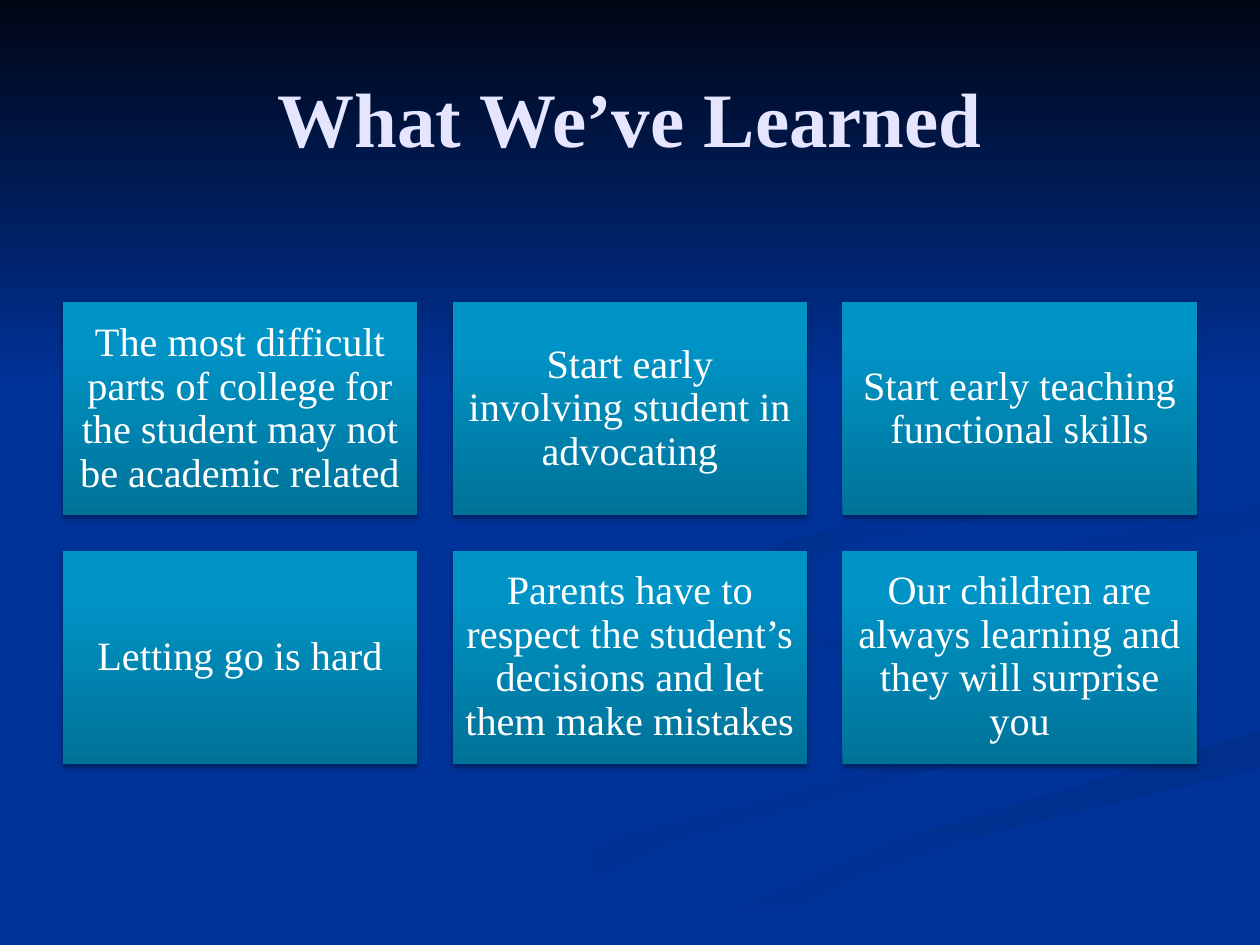
import lxml.etree
import pptx
import pptx.dml.color
import pptx.enum.shapes
import pptx.enum.text
import pptx.oxml
import pptx.oxml.ns
import pptx.util

COLORS = {
    "background": "003399",
    "night": "000514",
    "ribbon": "003193",
    "ribbon_dark": "002F8C",
    "ribbon_mid": "003091",
    "title": "E5E5FF",
    "card_bottom": "007298",
    "card_middle": "0094C6",
    "card_top": "0095C7",
    "text": "FFFFFF",
}
FONT = "Times New Roman"
RECTANGLE = pptx.enum.shapes.MSO_SHAPE.RECTANGLE


def paint(shape, stops, angle):
    """Fill with a gradient of {percent: colour}; angle is counter-clockwise."""
    shape.shadow.inherit = False
    shape.line.fill.background()
    shape.fill.gradient()
    shape.fill.gradient_angle = angle
    stop_list = shape._element.spPr.find(".//" + pptx.oxml.ns.qn("a:gsLst"))
    for old_stop in list(stop_list):
        stop_list.remove(old_stop)
    for percent, color in stops.items():
        stop = lxml.etree.SubElement(stop_list, pptx.oxml.ns.qn("a:gs"), pos=str(percent * 1000))
        lxml.etree.SubElement(stop, pptx.oxml.ns.qn("a:srgbClr"), val=COLORS[color])


def write(shape, text, size, color, bold=False):
    """Put one centred paragraph in the middle of a shape."""
    frame = shape.text_frame
    frame.word_wrap = True
    frame.vertical_anchor = pptx.enum.text.MSO_ANCHOR.MIDDLE
    paragraph = frame.paragraphs[0]
    paragraph.alignment = pptx.enum.text.PP_ALIGN.CENTER
    run = paragraph.add_run()
    run.text = text
    run.font.name = FONT
    run.font.size = pptx.util.Pt(size)
    run.font.bold = bold
    run.font.color.rgb = pptx.dml.color.RGBColor.from_string(COLORS[color])
    return paragraph


deck = pptx.Presentation()
deck.slide_width = pptx.util.Inches(10)
deck.slide_height = pptx.util.Inches(7.5)
slide = deck.slides.add_slide(deck.slide_layouts[6])
slide.background.fill.solid()
slide.background.fill.fore_color.rgb = pptx.dml.color.RGBColor.from_string(COLORS["background"])

# Background ribbons: first colour, last colour, angle, outline in tenths of an inch
ribbons = [
    ("background", "ribbon", 0,
     [(78, 55), (61, 50), (57, 46), (68, 52), (78, 56), (74, 60), (50, 66), (30, 75),
      (36, 75), (53, 67), (78, 60), (80, 58)]),
    ("background", "ribbon", 315,
     [(94, 57), (87, 53), (76, 50), (72, 46), (75, 50), (90, 56), (92, 58), (89, 60)]),
    ("ribbon_dark", "background", 270,
     [(50, 75), (57, 75), (67, 70), (79, 66), (100, 61), (100, 58), (80, 64), (63, 69)]),
    ("background", "background", 0,
     [(72, 46), (79, 51), (94, 57), (78, 63), (62, 68), (48, 75), (52, 75), (70, 67),
      (100, 58), (100, 54), (87, 51), (78, 46), (87, 42), (100, 40), (100, 39), (79, 42)]),
    ("ribbon_mid", "background", 315,
     [(78, 46), (83, 50), (80, 47), (84, 45), (100, 42), (100, 40), (85, 43)]),
    ("ribbon_dark", "background", 315,
     [(68, 43), (84, 40), (89, 34), (86, 29), (76, 23), (87, 30), (89, 34), (84, 38),
      (62, 43), (58, 46), (62, 50), (59, 47)]),
]
for first, last, angle, outline in ribbons:
    builder = slide.shapes.build_freeform(*outline[0], scale=pptx.util.Inches(0.1))
    builder.add_line_segments(outline[1:], close=True)
    paint(builder.convert_to_shape(), {0: first, 100: last}, angle)

night_sky = slide.shapes.add_shape(RECTANGLE, 0, 0, deck.slide_width, pptx.util.Inches(3.08))
paint(night_sky, {0: "night", 100: "background"}, 270)

MARGIN = deck.slide_width // 20
heading = slide.shapes.add_textbox(
    MARGIN, pptx.util.Inches(0.3), deck.slide_width - 2 * MARGIN, pptx.util.Inches(1.25))
write(heading, "What We’ve Learned", 44, "title", bold=True)

# Lessons in a grid of three columns
lessons = [
    "The most difficult parts of college for the student may not be academic related",
    "Start early involving student in advocating",
    "Start early teaching functional skills",
    "Letting go is hard",
    "Parents have to respect the student’s decisions and let them make mistakes",
    "Our children are always learning and they will surprise you",
]
COLUMNS = 3
GAP = pptx.util.Inches(0.28)
GRID_TOP = pptx.util.Inches(2.4)
CARD_WIDTH = (deck.slide_width - 2 * MARGIN - (COLUMNS - 1) * GAP) // COLUMNS
CARD_HEIGHT = pptx.util.Inches(1.69)
SHADOW = (
    '<a:outerShdw xmlns:a="http://schemas.openxmlformats.org/drawingml/2006/main" '
    'blurRad="39400" dist="22900" dir="5400000" rotWithShape="0">'
    '<a:srgbClr val="000000"><a:alpha val="35000"/></a:srgbClr></a:outerShdw>'
)
for index, lesson in enumerate(lessons):
    row, column = divmod(index, COLUMNS)
    card = slide.shapes.add_shape(
        RECTANGLE, MARGIN + column * (CARD_WIDTH + GAP), GRID_TOP + row * (CARD_HEIGHT + GAP),
        CARD_WIDTH, CARD_HEIGHT)
    paint(card, {0: "card_bottom", 80: "card_middle", 100: "card_top"}, 90)
    effects = card._element.spPr.find(pptx.oxml.ns.qn("a:effectLst"))
    effects.append(pptx.oxml.parse_xml(SHADOW))
    write(card, lesson, 23, "text").line_spacing = 0.9
    frame = card.text_frame
    frame.margin_left = frame.margin_right = pptx.util.Inches(0.1)
    frame.margin_top = frame.margin_bottom = pptx.util.Inches(0.1)

deck.save("out.pptx")
